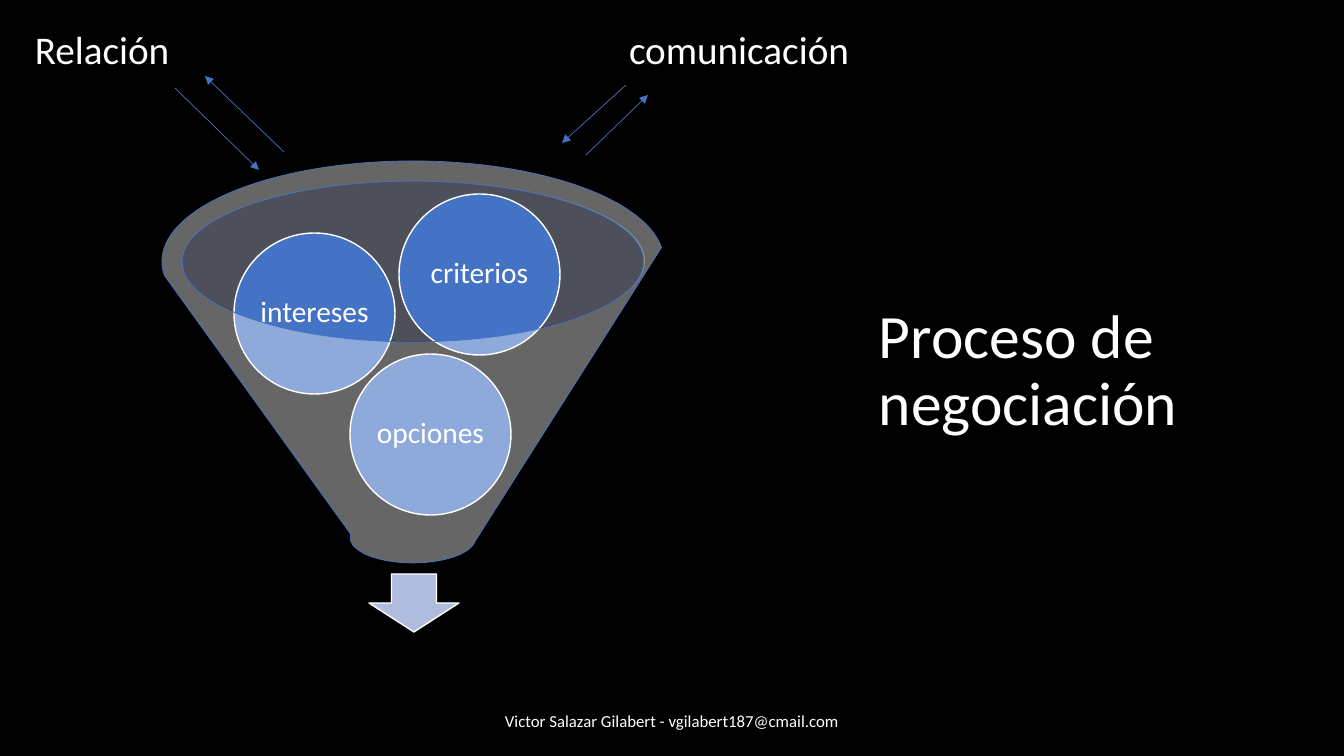
"""Builds the negotiation funnel slide."""
from lxml import etree
from pptx import Presentation
from pptx.dml.color import RGBColor
from pptx.enum.shapes import MSO_CONNECTOR, MSO_SHAPE
from pptx.enum.text import MSO_ANCHOR, PP_ALIGN
from pptx.oxml.ns import qn
from pptx.util import Pt

SLIDE_WIDTH, SLIDE_HEIGHT = 1344, 756
SCALE = 12192000 / SLIDE_WIDTH
FONT = "Calibri"
COLORS = {
    "background": "000000",
    "white": "FFFFFF",
    "blue": "4472C4",
    "mouth": "C1C9E4",
    "arrow": "B0BCDE",
}

TITLE = ("Proceso de negociación", (869, 271, 362, 202), 44)
LABELS = [
    ("Relación", (-41, 0, 286, 98), 28),
    ("comunicación", (596, 0, 286, 98), 28),
    ("Victor Salazar Gilabert - vgilabert187@cmail.com", (445, 701, 454, 40), 12),
]
MOUTH_BOX = (182, 181, 463, 160)
DOWN_ARROW_BOX = (369, 574, 90, 58)
FUNNEL_BOX = (162, 161, 502, 402)
CIRCLE_SIZE = 161
CIRCLES = [("opciones", 350, 354), ("intereses", 234, 233), ("criterios", 399, 194)]
ARROWS = [
    ((175, 88), (259, 170)),
    ((626, 85), (562, 143)),
    ((284, 152), (205, 76)),
    ((586, 155), (648, 95)),
]


def px(*lengths):
    return [round(length * SCALE) for length in lengths]


def color(name):
    return RGBColor.from_string(COLORS[name])


def write(shape, text, size, align=PP_ALIGN.CENTER, spacing=1.0):
    frame = shape.text_frame
    frame.word_wrap = True
    frame.vertical_anchor = MSO_ANCHOR.MIDDLE
    paragraph = frame.paragraphs[0]
    paragraph.text = text
    paragraph.alignment = align
    paragraph.line_spacing = spacing
    font = paragraph.font
    font.name, font.size = FONT, Pt(size)
    font.color.rgb = color("white")
    return frame


def add_label(slide, text, box, size, **style):
    write(slide.shapes.add_textbox(*px(*box)), text, size, **style)


def add_filled(slide, kind, box, fill, line=None, width=1, opacity=100):
    shape = slide.shapes.add_shape(kind, *px(*box))
    shape.shadow.inherit = False
    shape.fill.solid()
    shape.fill.fore_color.rgb = color(fill)
    if opacity < 100:
        fill_color = shape.fill._xPr.find(qn("a:solidFill"))[0]
        etree.SubElement(fill_color, qn("a:alpha"), val=str(opacity * 1000))
    if line:
        shape.line.color.rgb = color(line)
        shape.line.width = Pt(width)
    else:
        shape.line.fill.background()
    return shape


def add_arrow(slide, start, end):
    arrow = slide.shapes.add_connector(MSO_CONNECTOR.STRAIGHT, *px(*start, *end))
    arrow.line.color.rgb = color("blue")
    arrow.line.width = Pt(0.5)
    etree.SubElement(arrow.line._get_or_add_ln(), qn("a:tailEnd"), type="triangle")
    etree.SubElement(arrow._element.spPr, qn("a:effectLst"))


def add_circle(slide, text, left, top):
    box = (left, top, CIRCLE_SIZE, CIRCLE_SIZE)
    circle = add_filled(slide, MSO_SHAPE.OVAL, box, "blue", "white")
    frame = write(circle, text, 21, spacing=0.9)
    frame.margin_left = frame.margin_right = 0
    frame.margin_top = frame.margin_bottom = 0


def main():
    presentation = Presentation()
    presentation.slide_width, presentation.slide_height = px(SLIDE_WIDTH, SLIDE_HEIGHT)
    slide = presentation.slides.add_slide(presentation.slide_layouts[6])
    slide.background.fill.solid()
    slide.background.fill.fore_color.rgb = color("background")

    add_label(slide, *TITLE, align=PP_ALIGN.LEFT, spacing=0.9)
    add_filled(slide, MSO_SHAPE.OVAL, MOUTH_BOX, "mouth", opacity=40)
    add_filled(slide, MSO_SHAPE.DOWN_ARROW, DOWN_ARROW_BOX, "arrow", "white")
    for circle in CIRCLES:
        add_circle(slide, *circle)
    add_filled(slide, MSO_SHAPE.FUNNEL, FUNNEL_BOX, "white", "blue", 0.5, 40)
    for label in LABELS:
        add_label(slide, *label)
    for start, end in ARROWS:
        add_arrow(slide, start, end)
    presentation.save("out.pptx")


if __name__ == "__main__":
    main()
